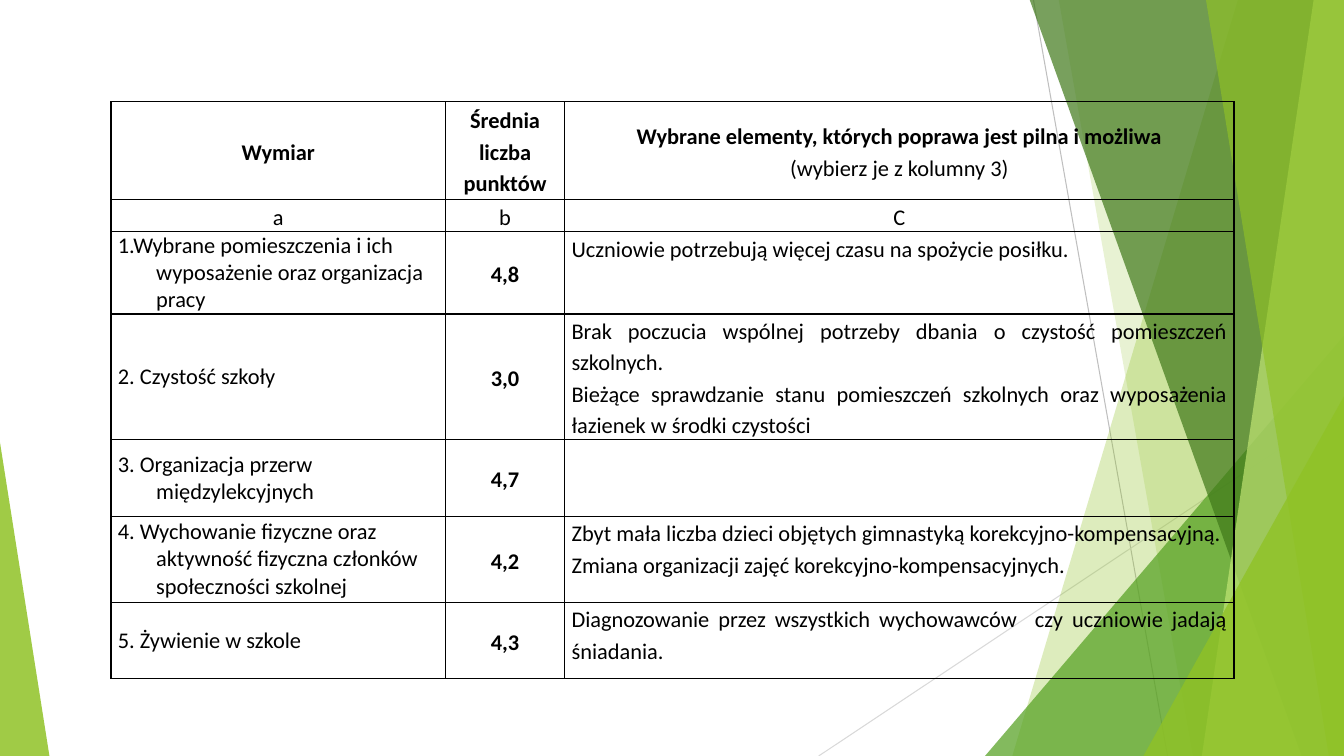
from pptx import Presentation
from pptx.dml.color import RGBColor
from pptx.enum.shapes import MSO_CONNECTOR, MSO_SHAPE
from pptx.enum.text import MSO_ANCHOR, PP_ALIGN
from pptx.oxml.ns import qn
from pptx.util import Pt
from lxml import etree

PX = 9144
WIDTH, HEIGHT = 1333, 750
STRAIGHT = MSO_CONNECTOR.STRAIGHT
TRIANGLE = MSO_SHAPE.ISOSCELES_TRIANGLE
MIDDLE, TOP = MSO_ANCHOR.MIDDLE, MSO_ANCHOR.TOP
LEFT, CENTER, JUSTIFY = PP_ALIGN.LEFT, PP_ALIGN.CENTER, PP_ALIGN.JUSTIFY
COLORS = {
    "text": "000000",
    "line": "BFBFBF",
    "pale line": "D9D9D9",
    "lime": "90C226",
    "green": "54A021",
    "forest": "3F7819",
    "light": "C0E474",
}


def paint(shape, color, opacity):
    shape.shadow.inherit = False
    shape.line.fill.background()
    shape.fill.solid()
    shape.fill.fore_color.rgb = RGBColor.from_string(COLORS[color])
    srgb = shape.fill._xPr.find(qn("a:solidFill"))[0]
    etree.SubElement(srgb, qn("a:alpha"), val=str(opacity * 1000))


def add_borders(cell):
    properties = cell._tc.get_or_add_tcPr()
    for side in ("lnL", "lnR", "lnT", "lnB"):
        line = etree.SubElement(properties, qn("a:" + side), w=str(Pt(1)))
        fill = etree.SubElement(line, qn("a:solidFill"))
        etree.SubElement(fill, qn("a:srgbClr"), val=COLORS["text"])


presentation = Presentation()
presentation.slide_width = WIDTH * PX
presentation.slide_height = HEIGHT * PX
slide = presentation.slides.add_slide(presentation.slide_layouts[6])
shapes = slide.shapes

for start_x, start_y, end_x, end_y, color in [
    (1025, 0, 1158, HEIGHT, "line"),
    (WIDTH, 403, 812, HEIGHT, "pale line"),
]:
    connector = shapes.add_connector(
        STRAIGHT, start_x * PX, start_y * PX, end_x * PX, end_y * PX
    )
    connector.line.color.rgb = RGBColor.from_string(COLORS[color])
    connector.line.width = Pt(0.75)
    etree.SubElement(connector._element.spPr, qn("a:effectLst"))

bands = [
    ("band", 1228, 1004, "lime", 30),
    ("band", 1050, 1183, "lime", 20),
    ("triangle", 977, 333, "green", 72),
    ("band", 1021, 1291, "forest", 70),
    ("band", 1303, 1192, "light", 70),
    ("band", 1196, 1318, "lime", 65),
    ("triangle", 1134, 393, "lime", 80),
]
for kind, first, second, color, opacity in bands:
    if kind == "band":
        builder = shapes.build_freeform(first, -1, scale=PX)
        builder.add_line_segments([(WIDTH, -1), (WIDTH, HEIGHT), (second, HEIGHT)])
        shape = builder.convert_to_shape()
    else:
        shape = shapes.add_shape(
            TRIANGLE, first * PX, second * PX, (WIDTH - first) * PX, (HEIGHT - second) * PX
        )
        shape.adjustments[0] = 1
    paint(shape, color, opacity)

left_triangle = shapes.add_shape(TRIANGLE, 0, 439 * PX, 49 * PX, 311 * PX)
left_triangle.adjustments[0] = 0
paint(left_triangle, "lime", 85)

column_widths = [332, 118, 664]
row_heights = [97, 32, 76, 101, 76, 85, 76]
rows = [
    ("Wymiar", "Średnia liczba punktów",
     ["Wybrane elementy, których poprawa jest pilna i możliwa",
      "(wybierz je z kolumny 3)"]),
    ("a", "b", ["C"]),
    ("1.Wybrane pomieszczenia i ich wyposażenie oraz organizacja pracy", "4,8",
     ["Uczniowie potrzebują więcej czasu na spożycie posiłku."]),
    ("2. Czystość szkoły", "3,0",
     ["Brak poczucia wspólnej potrzeby dbania o czystość pomieszczeń szkolnych.",
      "Bieżące sprawdzanie stanu pomieszczeń szkolnych oraz wyposażenia łazienek "
      "w środki czystości"]),
    ("3. Organizacja przerw międzylekcyjnych", "4,7", []),
    ("4. Wychowanie fizyczne oraz aktywność fizyczna członków społeczności szkolnej",
     "4,2",
     ["Zbyt mała liczba dzieci objętych gimnastyką korekcyjno-kompensacyjną. "
      "Zmiana organizacji zajęć korekcyjno-kompensacyjnych."]),
    ("5. Żywienie w szkole", "4,3",
     ["Diagnozowanie przez wszystkich wychowawców  czy uczniowie jadają śniadania."]),
]

table = shapes.add_table(
    len(rows), len(column_widths), 110 * PX, 101 * PX,
    sum(column_widths) * PX, sum(row_heights) * PX,
).table
table.first_row = False
table.horz_banding = False
for column, width in zip(table.columns, column_widths):
    column.width = width * PX
for row, height in zip(table.rows, row_heights):
    row.height = height * PX

for row_index, (dimension, score, remarks) in enumerate(rows):
    heading = row_index < 2
    for column_index, lines in enumerate([[dimension], [score], remarks]):
        cell = table.cell(row_index, column_index)
        add_borders(cell)
        cell.fill.background()
        cell.margin_left = cell.margin_right = 7 * PX
        cell.margin_top = cell.margin_bottom = 0
        cell.vertical_anchor = MIDDLE if heading or column_index < 2 else TOP
        cell.text = "\n".join(lines)
        for line_index, paragraph in enumerate(cell.text_frame.paragraphs):
            paragraph.font.name = "Calibri"
            paragraph.font.size = Pt(16)
            paragraph.font.color.rgb = RGBColor.from_string(COLORS["text"])
            paragraph.line_spacing = 1.15
            if heading:
                paragraph.alignment = CENTER
                paragraph.font.bold = row_index == 0 and line_index == 0
                continue
            paragraph.font.bold = column_index == 1
            if column_index == 2:
                paragraph.alignment = LEFT if row_index == 5 else JUSTIFY
                space = 3 if row_index == 6 else 0
            else:
                paragraph.alignment = CENTER if column_index == 1 else LEFT
                space = 6
            paragraph.space_before = paragraph.space_after = Pt(space)
            if column_index == 0:
                paragraph.line_spacing = 1.0
                properties = paragraph._p.get_or_add_pPr()
                properties.set("marL", str(38 * PX))
                properties.set("indent", str(-38 * PX))

presentation.save("out.pptx")
